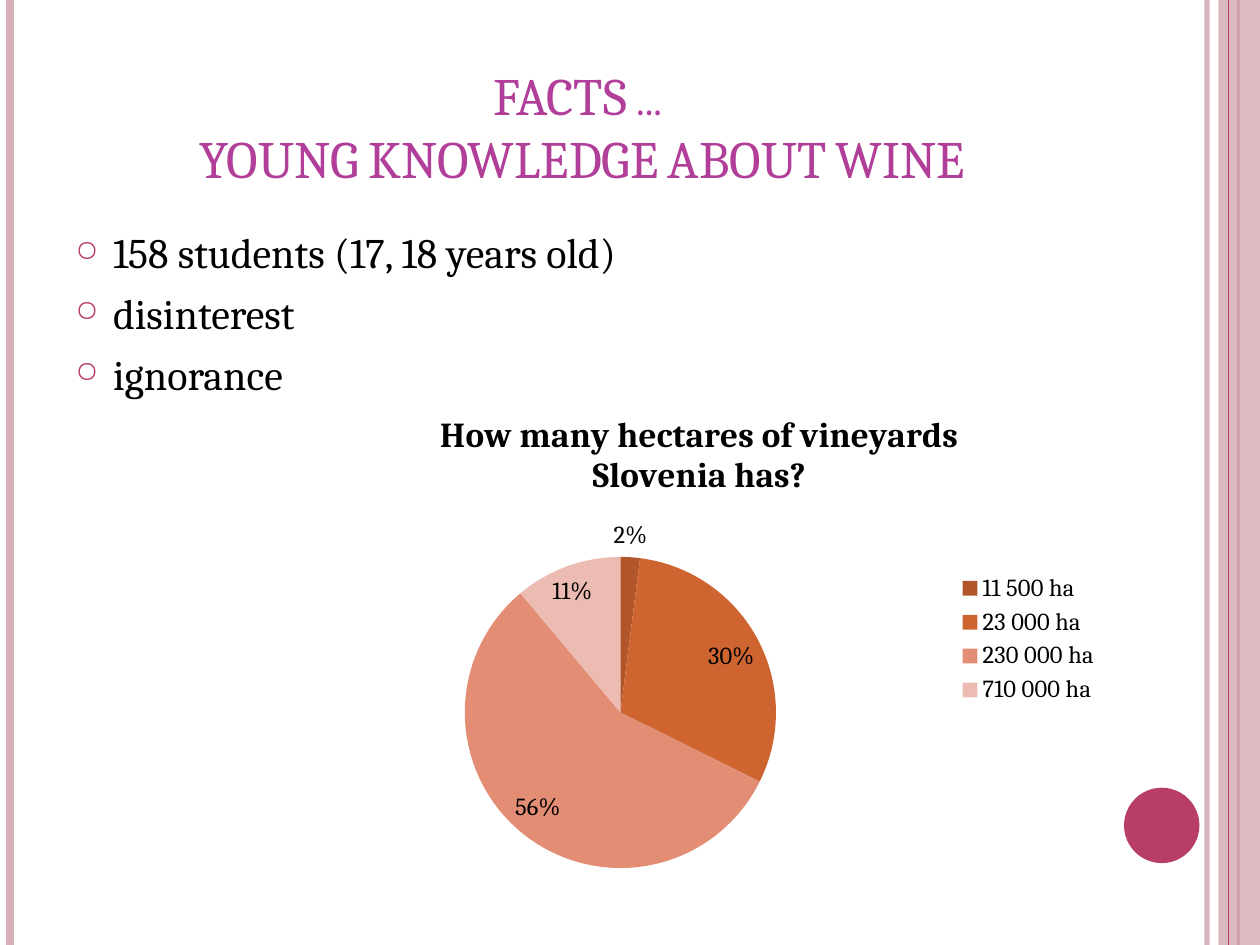
"""Build the slide on what young people know about wine, with a pie chart."""
from lxml import etree
from pptx import Presentation
from pptx import util as u
from pptx.chart.data import CategoryChartData
from pptx.dml.color import RGBColor
from pptx.enum import chart as c, shapes, text
from pptx.oxml.ns import qn

FONT = "Cambria"
BLACK = RGBColor(0x00, 0x00, 0x00)
PURPLE = RGBColor(0xB1, 0x3F, 0x9A)
ROSE = RGBColor(0xB8, 0x3D, 0x68)
PINK = RGBColor(0xD8, 0xAF, 0xB9)
SLICES = [
    RGBColor(0xB0, 0x56, 0x2A),
    RGBColor(0xCE, 0x64, 0x30),
    RGBColor(0xE2, 0x8D, 0x74),
    RGBColor(0xEC, 0xBB, 0xB1),
]


def set_font(font, size, color=BLACK, bold=False):
    font.name = FONT
    font.size = u.Pt(size)
    font.bold = bold
    font.color.rgb = color


def set_opacity(shape, percent):
    for color in shape._element.spPr.iter(qn("a:srgbClr")):
        etree.SubElement(color, qn("a:alpha")).set("val", str(percent * 1000))


deck = Presentation()
deck.slide_width, deck.slide_height = u.Cm(25.4), u.Cm(19.05)
page = deck.slides.add_slide(deck.slide_layouts[5])

stripes = {}
for x, color, width in [(24.33, PINK, 3), (0.2, PINK, 4.5), (24.97, ROSE, 1.5), (24.77, ROSE, 0.75)]:
    stripe = page.shapes.add_connector(
        shapes.MSO_CONNECTOR.STRAIGHT, u.Cm(x), 0, u.Cm(x), deck.slide_height)
    stripe.line.color.rgb = color
    stripe.line.width = u.Pt(width)
    etree.SubElement(stripe._element.spPr, qn("a:effectLst"))
    stripes[x] = stripe
set_opacity(stripes[24.33], 93)

band = page.shapes.add_shape(
    shapes.MSO_SHAPE.RECTANGLE, u.Cm(24.56), 0, u.Cm(0.84), deck.slide_height)
dot = page.shapes.add_shape(
    shapes.MSO_SHAPE.OVAL, u.Cm(22.66), u.Cm(15.88), u.Cm(1.52), u.Cm(1.52))
for shape, color in [(band, PINK), (dot, ROSE)]:
    shape.shadow.inherit = False
    shape.fill.solid()
    shape.fill.fore_color.rgb = color
    shape.line.fill.background()
set_opacity(band, 87)
band._element.addnext(stripes[24.77]._element)

title = page.shapes.title
title.left, title.top, title.width, title.height = u.Cm(1.27), u.Cm(0.76), u.Cm(20.75), u.Cm(3.18)
title.text_frame.text = "FACTS ...\v YOUNG KNOWLEDGE ABOUT WINE"
title.text_frame.auto_size = text.MSO_AUTO_SIZE.NONE
title.text_frame.vertical_anchor = text.MSO_ANCHOR.BOTTOM
heading = title.text_frame.paragraphs[0]
heading.alignment = text.PP_ALIGN.CENTER
for span in heading.runs:
    set_font(span.font, 30, PURPLE)
    span._r.get_or_add_rPr().set("cap", "small")

box = page.shapes.add_textbox(u.Cm(1.27), u.Cm(4.45), u.Cm(20.75), u.Cm(3.89))
box.text_frame.word_wrap = True
box.text_frame.text = "158 students (17, 18 years old)\ndisinterest\nignorance"
for index, para in enumerate(box.text_frame.paragraphs):
    properties = para._p.get_or_add_pPr()
    properties.set("marL", str(u.Cm(0.76)))
    properties.set("indent", str(-u.Cm(0.76)))
    bullet_color = etree.SubElement(properties, qn("a:buClr"))
    etree.SubElement(bullet_color, qn("a:srgbClr")).set("val", str(ROSE))
    etree.SubElement(properties, qn("a:buSzPct")).set("val", "70000")
    etree.SubElement(properties, qn("a:buChar")).set("char", "○")
    para.space_before = u.Pt(6 if index else 0)
    set_font(para.runs[0].font, 24)

data = CategoryChartData()
data.categories = ["11 500 ha", "23 000 ha", "230 000 ha", "710 000 ha"]
data.add_series("Series 1", [2, 30, 56, 11])
chart = page.shapes.add_chart(
    c.XL_CHART_TYPE.PIE, u.Cm(5.77), u.Cm(7.92), u.Cm(16.66), u.Cm(9.93), data).chart
set_font(chart.font, 10)

chart.has_title = True
chart.chart_title.include_in_layout = False
chart.chart_title.text_frame.text = "How many hectares of vineyards\nSlovenia has?"
for para in chart.chart_title.text_frame.paragraphs:
    set_font(para.runs[0].font, 20, bold=True)

chart.has_legend = True
chart.legend.position = c.XL_LEGEND_POSITION.RIGHT
chart.legend.include_in_layout = False
set_font(chart.legend.font, 14)

pie = chart.plots[0]
pie.vary_by_categories = True
for index, color in enumerate(SLICES):
    fill = pie.series[0].points[index].format.fill
    fill.solid()
    fill.fore_color.rgb = color

pie.has_data_labels = True
labels = pie.data_labels
labels.show_value = True
labels.number_format = '0"%"'
labels.number_format_is_linked = False
labels.position = c.XL_LABEL_POSITION.BEST_FIT
set_font(labels.font, 14)

deck.save("out.pptx")
